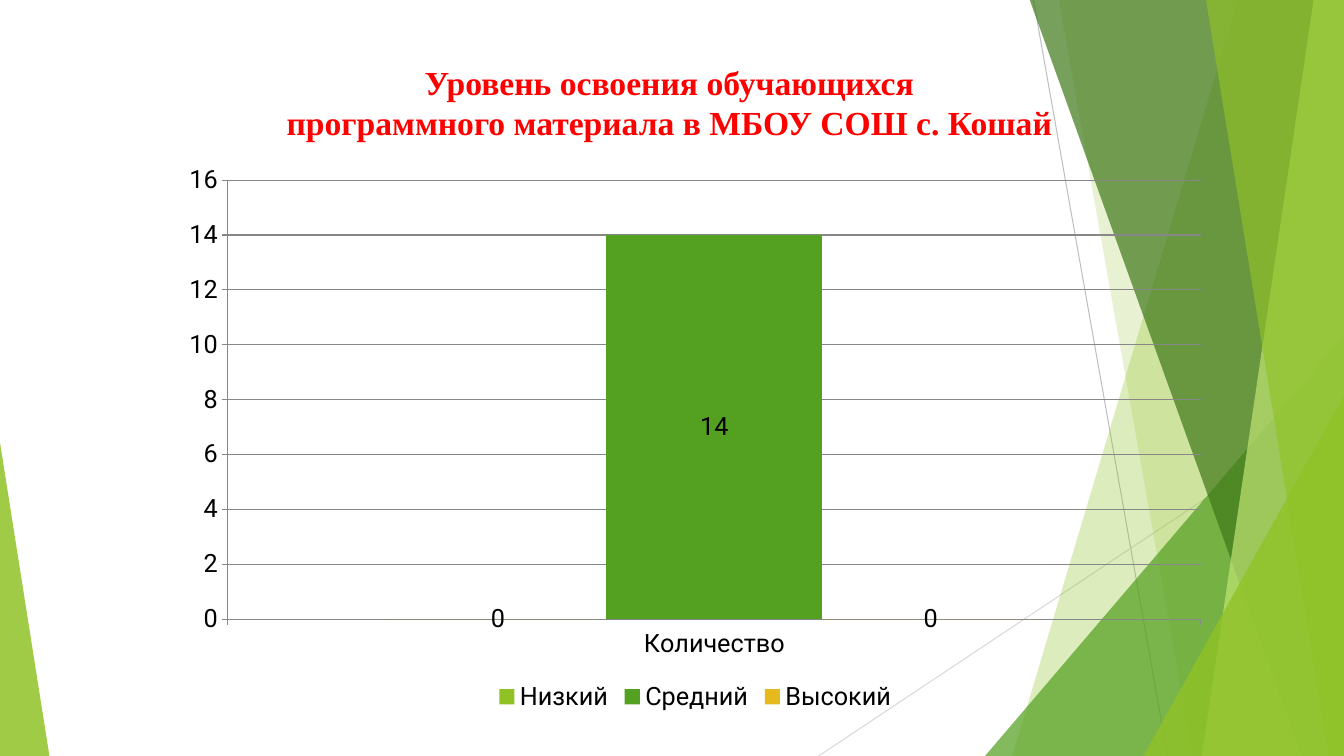
from dataclasses import dataclass

from lxml import etree
from pptx import Presentation
from pptx.chart.data import CategoryChartData
from pptx.dml.color import RGBColor
from pptx.enum.chart import XL_CHART_TYPE, XL_LABEL_POSITION, XL_LEGEND_POSITION, XL_TICK_MARK
from pptx.enum.shapes import MSO_CONNECTOR, MSO_SHAPE
from pptx.enum.text import PP_ALIGN
from pptx.oxml.ns import qn
from pptx.util import Emu, Pt

EMU_PER_PX = 9144
PAGE_WIDTH, PAGE_HEIGHT = 1333, 750
TRIANGLE = MSO_SHAPE.ISOSCELES_TRIANGLE
STRAIGHT = MSO_CONNECTOR.STRAIGHT
COLUMNS = XL_CHART_TYPE.COLUMN_CLUSTERED
LABEL_CENTER = XL_LABEL_POSITION.CENTER
LEGEND_BOTTOM = XL_LEGEND_POSITION.BOTTOM
TICK_OUTSIDE = XL_TICK_MARK.OUTSIDE
CENTER = PP_ALIGN.CENTER


@dataclass(frozen=True)
class Theme:
    lime: str = "90C226"
    green: str = "54A021"
    forest: str = "3F7819"
    pale: str = "C0E474"
    gold: str = "E6B91E"
    title: str = "FF0000"
    text: str = "000000"
    axis: str = "878787"
    line_dark: str = "BFBFBF"
    line_light: str = "D9D9D9"
    title_font: str = "Times New Roman"
    chart_font: str = "Roboto"
    title_size: int = 24
    chart_size: int = 18
    line_width: float = 0.75


THEME = Theme()


@dataclass(frozen=True)
class Ray:
    start: tuple[int, int]
    end: tuple[int, int]
    color: str


@dataclass(frozen=True)
class Band:
    """A strip from the page's top to its bottom, reaching the right edge."""
    top_left: int
    bottom_left: int
    color: str
    opacity: int


@dataclass(frozen=True)
class Corner:
    """A triangle standing on the page's bottom, its apex at one side."""
    left: int
    top: int
    width: int
    apex: float
    color: str
    opacity: int


@dataclass(frozen=True)
class Level:
    name: str
    count: int
    color: str


RAYS = [
    Ray((1025, 0), (1158, PAGE_HEIGHT), THEME.line_dark),
    Ray((PAGE_WIDTH, 403), (812, PAGE_HEIGHT), THEME.line_light),
]
FACETS = [
    Band(1228, 1004, THEME.lime, 30),
    Band(1050, 1183, THEME.lime, 20),
    Corner(977, 333, 356, 1, THEME.green, 72),
    Band(1021, 1291, THEME.forest, 70),
    Band(1303, 1192, THEME.pale, 70),
    Band(1196, 1318, THEME.lime, 65),
    Corner(1134, 393, 199, 1, THEME.lime, 80),
    Corner(0, 439, 49, 0, THEME.lime, 85),
]
TITLE_LINES = [
    "Уровень освоения обучающихся ",
    "программного материала в МБОУ СОШ с. Кошай ",
]
LEVELS = [
    Level("Низкий", 0, THEME.lime),
    Level("Средний", 14, THEME.green),
    Level("Высокий", 0, THEME.gold),
]


def px(*lengths: int) -> list[Emu]:
    return [Emu(length * EMU_PER_PX) for length in lengths]


def rgb(color: str) -> RGBColor:
    return RGBColor.from_string(color)


def draw_ray(page, ray: Ray) -> None:
    line = page.shapes.add_connector(STRAIGHT, *px(*ray.start, *ray.end))
    line.line.color.rgb = rgb(ray.color)
    line.line.width = Pt(THEME.line_width)
    etree.SubElement(line.element.spPr, qn("a:effectLst"))


def draw_facet(page, facet: Band | Corner) -> None:
    if isinstance(facet, Band):
        outline = page.shapes.build_freeform(facet.top_left, -1, scale=EMU_PER_PX)
        outline.add_line_segments([
            (PAGE_WIDTH, -1), (PAGE_WIDTH, PAGE_HEIGHT), (facet.bottom_left, PAGE_HEIGHT)])
        shape = outline.convert_to_shape()
    else:
        shape = page.shapes.add_shape(
            TRIANGLE, *px(facet.left, facet.top, facet.width, PAGE_HEIGHT - facet.top))
        shape.adjustments[0] = facet.apex
    shape.shadow.inherit = False
    shape.line.fill.background()
    shape.fill.solid()
    shape.fill.fore_color.rgb = rgb(facet.color)
    tint = shape.element.spPr.find(qn("a:solidFill")).find(qn("a:srgbClr"))
    etree.SubElement(tint, qn("a:alpha"), val=str(facet.opacity * 1000))


def draw_title(page) -> None:
    box = page.shapes.add_textbox(*px(30, 56, 1276, 91))
    frame = box.text_frame
    frame.word_wrap = True
    for index, line in enumerate(TITLE_LINES):
        para = frame.add_paragraph() if index else frame.paragraphs[0]
        para.alignment = CENTER
        span = para.add_run()
        span.text = line
        span.font.name = THEME.title_font
        span.font.size = Pt(THEME.title_size)
        span.font.bold = True
        span.font.color.rgb = rgb(THEME.title)


def style_line(line_format) -> None:
    line_format.color.rgb = rgb(THEME.axis)
    line_format.width = Pt(THEME.line_width)


def draw_chart(page) -> None:
    data = CategoryChartData()
    data.categories = ["Количество"]
    for level in LEVELS:
        data.add_series(level.name, [level.count])
    chart = page.shapes.add_chart(COLUMNS, *px(167, 153, 1045, 558), data).chart
    chart.has_title = False
    chart.font.name = THEME.chart_font
    chart.font.size = Pt(THEME.chart_size)
    chart.font.color.rgb = rgb(THEME.text)
    chart.has_legend = True
    chart.legend.position = LEGEND_BOTTOM
    chart.legend.include_in_layout = False

    for axis in (chart.category_axis, chart.value_axis):
        axis.major_tick_mark = TICK_OUTSIDE
        style_line(axis.format.line)
    values = chart.value_axis
    values.minimum_scale, values.maximum_scale, values.major_unit = 0, 16, 2
    values.has_major_gridlines = True
    style_line(values.major_gridlines.format.line)

    plot = chart.plots[0]
    plot.vary_by_categories = False
    plot.gap_width = 150
    plot.overlap = 0
    for level, series in zip(LEVELS, plot.series):
        series.format.fill.solid()
        series.format.fill.fore_color.rgb = rgb(level.color)
        series.data_labels.show_value = True
        series.data_labels.position = LABEL_CENTER


def main() -> None:
    deck = Presentation()
    deck.slide_width, deck.slide_height = px(PAGE_WIDTH, PAGE_HEIGHT)
    page = deck.slides.add_slide(deck.slide_layouts[6])
    for ray in RAYS:
        draw_ray(page, ray)
    for facet in FACETS:
        draw_facet(page, facet)
    draw_title(page)
    draw_chart(page)
    deck.save("out.pptx")


if __name__ == "__main__":
    main()
